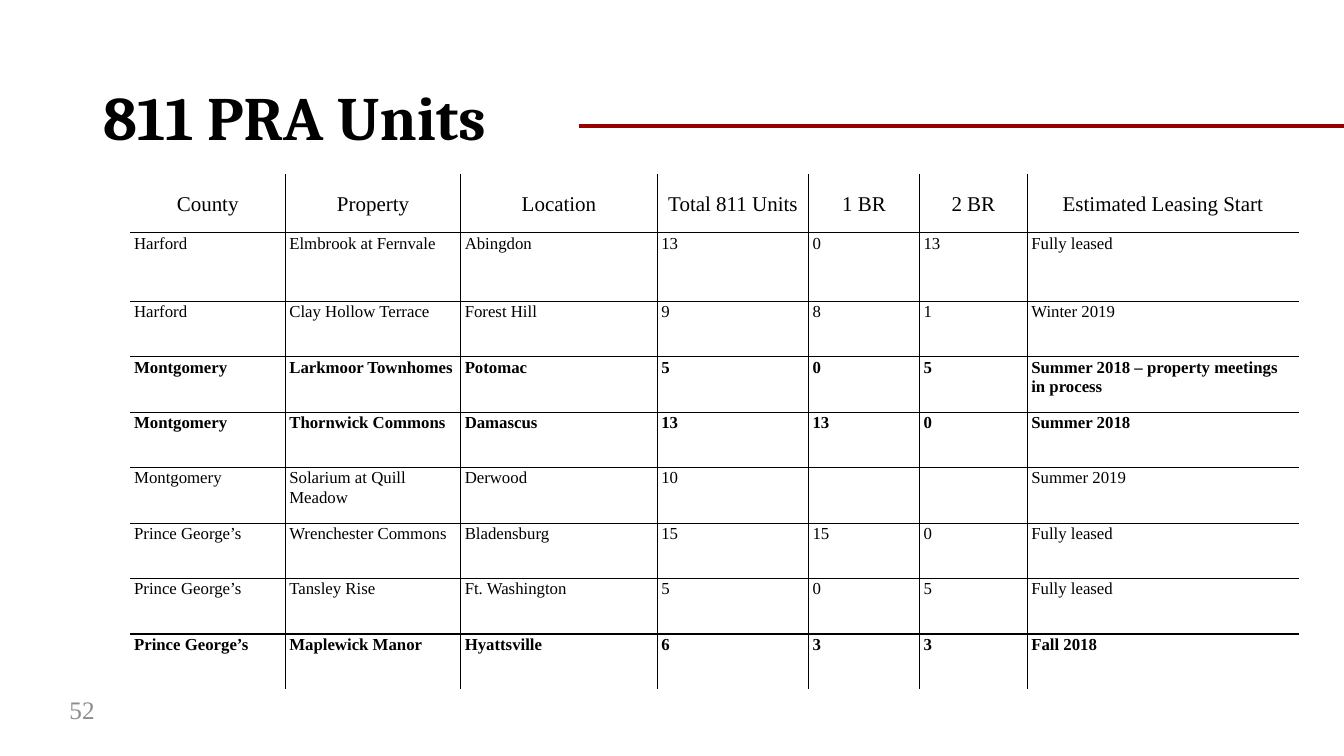
import pptx
import pptx.dml.color
import pptx.enum.shapes
import pptx.enum.text
import pptx.oxml
import pptx.oxml.ns
import pptx.util
from lxml import etree

TITLE = "811 PRA Units"
PAGE_NUMBER = "52"
HEADER = ("County", "Property", "Location", "Total 811 Units", "1 BR", "2 BR", "Estimated Leasing Start")
UNITS = [
    ("Harford", "Elmbrook at Fernvale", "Abingdon", "13", "0", "13", "Fully leased"),
    ("Harford", "Clay Hollow Terrace", "Forest Hill", "9", "8", "1", "Winter 2019"),
    ("Montgomery", "Larkmoor Townhomes", "Potomac", "5", "0", "5",
     "Summer 2018 – property meetings in process"),
    ("Montgomery", "Thornwick Commons", "Damascus", "13", "13", "0", "Summer 2018"),
    ("Montgomery", "Solarium at Quill Meadow", "Derwood", "10", "", "", "Summer 2019"),
    ("Prince George’s", "Wrenchester Commons", "Bladensburg", "15", "15", "0", "Fully leased"),
    ("Prince George’s", "Tansley Rise", "Ft. Washington", "5", "0", "5", "Fully leased"),
    ("Prince George’s", "Maplewick Manor", "Hyattsville", "6", "3", "3", "Fall 2018"),
]
BOLD_PROPERTIES = {"Larkmoor Townhomes", "Thornwick Commons", "Maplewick Manor"}

COLUMN_WIDTHS = (1.54, 1.74, 1.95, 1.5, 1.1, 1.07, 2.69)
ROW_HEIGHTS = (0.58, 0.68) + (0.55,) * (len(UNITS) - 1)
TABLE_LEFT, TABLE_TOP = 1.29, 1.73
SLIDE_WIDTH, SLIDE_HEIGHT = 13.33, 7.5

TITLE_FONT, BODY_FONT = "Cambria", "Times New Roman"
BLACK = pptx.dml.color.RGBColor(0, 0, 0)
GRAY = pptx.dml.color.RGBColor(0x8C, 0x8C, 0x8C)
RED = pptx.dml.color.RGBColor(0x98, 0, 0)
MIDDLE = pptx.enum.text.MSO_ANCHOR.MIDDLE
inches = pptx.util.Inches


def format_text(paragraph, font_name, size, color, bold=False):
    for run in paragraph.runs:
        run.font.name = font_name
        run.font.size = pptx.util.Pt(size)
        run.font.color.rgb = color
        run.font.bold = bold


def set_borders(cell, visible_sides):
    """Draw a 1 pt line on each visible side and none on the others."""
    properties = cell._tc.get_or_add_tcPr()
    for side in "LRTB":
        line = etree.SubElement(properties, pptx.oxml.ns.qn(f"a:ln{side}"), w=str(pptx.util.Pt(1)))
        if side in visible_sides:
            fill = etree.SubElement(line, pptx.oxml.ns.qn("a:solidFill"))
            etree.SubElement(fill, pptx.oxml.ns.qn("a:srgbClr"), val=str(BLACK))
        else:
            etree.SubElement(line, pptx.oxml.ns.qn("a:noFill"))


def add_title(slide):
    title = slide.shapes.title
    title.left, title.top, title.width, title.height = map(inches, (0.92, 0.65, 11.5, 1.09))
    title.text_frame.text = TITLE
    title.text_frame.vertical_anchor = MIDDLE
    paragraph = title.text_frame.paragraphs[0]
    paragraph.alignment = pptx.enum.text.PP_ALIGN.LEFT
    paragraph.line_spacing = 0.9
    format_text(paragraph, TITLE_FONT, 44, BLACK, bold=True)


def add_title_rule(slide):
    rule = slide.shapes.add_connector(
        pptx.enum.shapes.MSO_CONNECTOR.STRAIGHT,
        inches(5.74), inches(1.25), inches(SLIDE_WIDTH), inches(1.25))
    rule.line.color.rgb = RED
    rule.line.width = pptx.util.Pt(2.25)
    etree.SubElement(rule._element.spPr, pptx.oxml.ns.qn("a:effectLst"))


def add_page_number(slide):
    box = slide.shapes.add_textbox(*map(inches, (0.59, 6.84, 0.59, 0.4)))
    box.text_frame.word_wrap = True
    box.text_frame.text = PAGE_NUMBER
    box.text_frame.vertical_anchor = MIDDLE
    format_text(box.text_frame.paragraphs[0], BODY_FONT, 18, GRAY)


def fill_cell(cell, text, is_header, bold):
    cell.margin_left = cell.margin_right = inches(0.04)
    cell.margin_top = cell.margin_bottom = 0
    cell.fill.background()
    cell.text_frame.text = text
    paragraph = cell.text_frame.paragraphs[0]
    paragraph.line_spacing = 1.07
    paragraph.space_after = pptx.util.Pt(8)
    if is_header:
        cell.vertical_anchor = MIDDLE
        paragraph.alignment = pptx.enum.text.PP_ALIGN.CENTER
    format_text(paragraph, BODY_FONT, 15 if is_header else 12, BLACK, bold)


def add_units_table(slide):
    rows = [HEADER] + UNITS
    table = slide.shapes.add_table(
        len(rows), len(HEADER), inches(TABLE_LEFT), inches(TABLE_TOP),
        inches(sum(COLUMN_WIDTHS)), inches(sum(ROW_HEIGHTS))).table
    table.first_row = table.horz_banding = False
    for column, width in zip(table.columns, COLUMN_WIDTHS):
        column.width = inches(width)
    last_row, last_column = len(rows) - 1, len(HEADER) - 1
    for row_index, values in enumerate(rows):
        table.rows[row_index].height = inches(ROW_HEIGHTS[row_index])
        for column_index, text in enumerate(values):
            cell = table.cell(row_index, column_index)
            inner_sides = {"L": column_index > 0, "R": column_index < last_column,
                           "T": row_index > 0, "B": row_index < last_row}
            set_borders(cell, [side for side, inner in inner_sides.items() if inner])
            fill_cell(cell, text, row_index == 0, values[1] in BOLD_PROPERTIES)


def main():
    presentation = pptx.Presentation()
    presentation.slide_width = inches(SLIDE_WIDTH)
    presentation.slide_height = inches(SLIDE_HEIGHT)
    slide = presentation.slides.add_slide(presentation.slide_layouts.get_by_name("Title Only"))
    add_title(slide)
    add_page_number(slide)
    add_title_rule(slide)
    add_units_table(slide)
    presentation.save("out.pptx")


if __name__ == "__main__":
    main()
